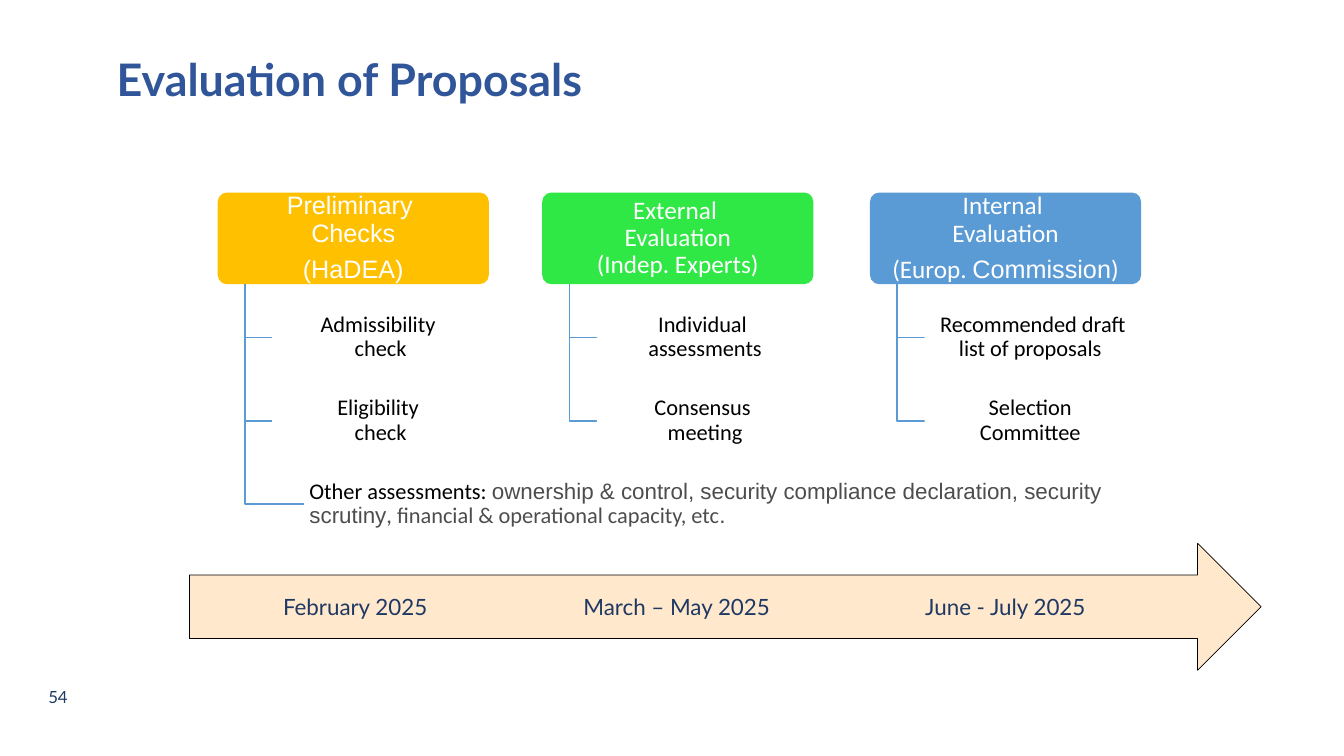
import pptx
import pptx.util
import pptx.dml.color
import pptx.enum.shapes
import pptx.enum.text

Pt = pptx.util.Pt
Shape = pptx.enum.shapes.MSO_SHAPE
Align = pptx.enum.text.PP_ALIGN
Anchor = pptx.enum.text.MSO_ANCHOR

THEME = {
    "title": "305699", "navy": "1F3864", "white": "FFFFFF", "black": "000000",
    "grey": "4D4D4D", "branch": "5B9BD5", "arrow": "FFE8CC",
    "amber": "FFC000", "green": "30E845", "blue": "5B9BD5",
    "title_size": 32, "stage_size": 18, "body_size": 16, "number_size": 12,
    "sans": "Arial", "body": "Calibri", "display": "Lato",
}

# Each paragraph is a list of runs: (text, font, colour).
TITLE = [[("Evaluation of Proposals", "display", "title")]]
SLIDE_NUMBER = [[("54", "display", "navy")]]
STAGES = [
    {"left": 155.5, "fill": "amber",
     "heading": [[("Preliminary \nChecks", "sans", "white")],
                 [("(HaDEA)", "sans", "white")]],
     "steps": ["Admissibility \ncheck", "Eligibility \ncheck"]},
    {"left": 387.3, "fill": "green",
     "heading": [[("External \nEvaluation\n(Indep. Experts)", "body", "white")]],
     "steps": ["Individual \nassessments", "Consensus \nmeeting"]},
    {"left": 621.4, "fill": "blue",
     "heading": [[("Internal \nEvaluation", "body", "white")],
                 [("(Europ. ", "body", "white"), ("Commission", "sans", "white"),
                  (")", "body", "white")]],
     "steps": ["Recommended draft list of proposals ", "Selection \nCommittee "]},
]
OTHER_ASSESSMENTS = [[
    ("Other assessments: ", "body", "black"),
    ("ownership & control, security compliance declaration, security scrutiny",
     "sans", "grey"),
    (", financial & operational capacity, etc", "body", "grey"),
    (".", "sans", "grey"),
]]
PERIODS = [("February 2025", 195.1, 126.7), ("March – May 2025", 409.7, 155.5),
           ("June - July 2025", 653.8, 147.6)]

HEAD_TOP, HEAD_WIDTH, HEAD_HEIGHT = 137.5, 193.7, 65.5
TRUNK_INDENT, STEP_INDENT = 19.4, 39
STEP_TOP, STEP_HEIGHT, STEP_PITCH = 219.6, 43.2, 59.4
OTHER_LEFT, OTHER_WIDTH = 217.4, 584.6


def color(name):
    return pptx.dml.color.RGBColor.from_string(THEME[name])


def write(frame, paragraphs, size, align=Align.LEFT, spacing=None):
    frame.word_wrap = True
    for index, runs in enumerate(paragraphs):
        paragraph = frame.add_paragraph() if index else frame.paragraphs[0]
        paragraph.alignment = align
        if spacing:
            paragraph.line_spacing = spacing
            paragraph.space_after = Pt(0.35 * THEME[size])
        for text, font, ink in runs:
            for number, line in enumerate(text.split("\n")):
                if number:
                    paragraph.add_line_break()
                run = paragraph.add_run()
                run.text = line
                run.font.name = THEME[font]
                run.font.size = Pt(THEME[size])
                run.font.color.rgb = color(ink)
                run.font.bold = size == "title_size"


def add_label(slide, box, paragraphs, size, anchor=Anchor.MIDDLE):
    label = slide.shapes.add_textbox(*map(Pt, box))
    label.text_frame.vertical_anchor = anchor
    write(label.text_frame, paragraphs, size)


def add_panel(slide, kind, box, fill):
    panel = slide.shapes.add_shape(kind, *map(Pt, box))
    panel.shadow.inherit = False
    panel.fill.solid()
    panel.fill.fore_color.rgb = color(fill)
    panel.line.fill.background()
    return panel


def add_card(slide, box, fill, paragraphs, size, inset, align=Align.CENTER):
    card = add_panel(slide, Shape.ROUNDED_RECTANGLE, box, fill)
    card.adjustments[0] = 0.1
    frame = card.text_frame
    frame.margin_left = frame.margin_right = Pt(inset * 1.5)
    frame.margin_top = frame.margin_bottom = Pt(inset)
    frame.vertical_anchor = Anchor.MIDDLE
    write(frame, paragraphs, size, align, spacing=0.9)


def add_branch(slide, trunk, end, row):
    """Elbow from the bottom of a stage heading to the step in the given row."""
    start = HEAD_TOP + HEAD_HEIGHT
    middle = STEP_TOP + row * STEP_PITCH + STEP_HEIGHT / 2
    builder = slide.shapes.build_freeform(Pt(trunk), Pt(start))
    builder.add_line_segments([(Pt(trunk), Pt(middle)), (Pt(end), Pt(middle))],
                              close=False)
    branch = builder.convert_to_shape()
    branch.shadow.inherit = False
    branch.fill.background()
    branch.line.color.rgb = color("branch")
    branch.line.width = Pt(1)


def add_step(slide, stage_left, row, left, width, paragraphs, align=Align.CENTER):
    add_branch(slide, stage_left + TRUNK_INDENT, left, row)
    box = (left, STEP_TOP + row * STEP_PITCH, width, STEP_HEIGHT)
    add_card(slide, box, "white", paragraphs, "body_size", 1.6, align)


def main():
    deck = pptx.Presentation()
    deck.slide_width, deck.slide_height = Pt(960), Pt(540)
    slide = deck.slides.add_slide(deck.slide_layouts[6])

    add_label(slide, (76.3, 9.4, 883.4, 93.6), TITLE, "title_size")

    for stage in STAGES:
        left = stage["left"]
        add_card(slide, (left, HEAD_TOP, HEAD_WIDTH, HEAD_HEIGHT), stage["fill"],
                 stage["heading"], "stage_size", 2)
        for row, step in enumerate(stage["steps"]):
            add_step(slide, left, row, left + STEP_INDENT, HEAD_WIDTH - STEP_INDENT,
                     [[(step, "body", "black")]])
    add_step(slide, STAGES[0]["left"], 2, OTHER_LEFT, OTHER_WIDTH,
             OTHER_ASSESSMENTS, Align.LEFT)

    timeline = add_panel(slide, Shape.RIGHT_ARROW, (135.4, 388.1, 765.4, 90.7), "arrow")
    timeline.line.color.rgb = color("black")
    timeline.line.width = Pt(0.5)
    for period, left, width in PERIODS:
        add_label(slide, (left, 419.8, width, 26.6), [[(period, "display", "navy")]],
                  "body_size", Anchor.TOP)

    add_label(slide, (27.4, 483.1, 216, 28.8), SLIDE_NUMBER, "number_size")
    deck.save("out.pptx")


if __name__ == "__main__":
    main()
